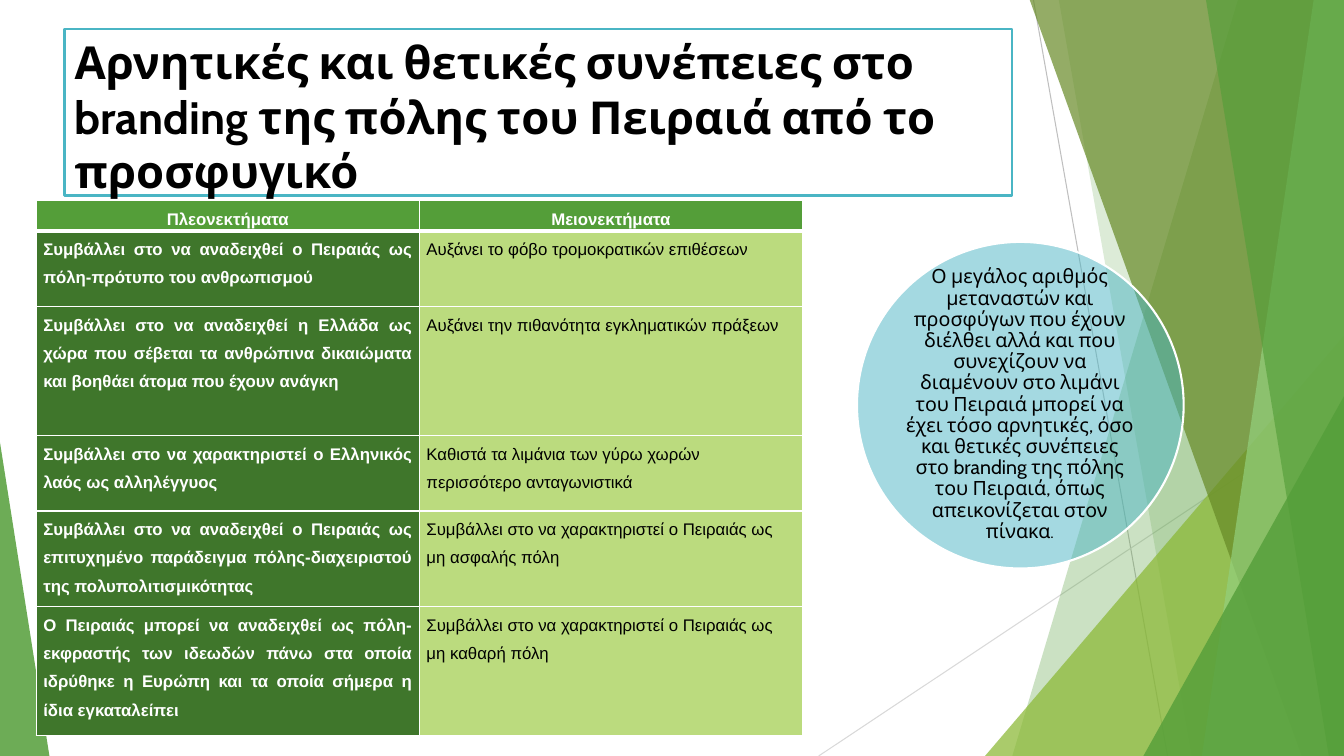
from lxml.etree import SubElement
from pptx import Presentation
from pptx.dml.color import RGBColor
from pptx.enum.shapes import MSO_CONNECTOR, MSO_SHAPE
from pptx.enum.text import MSO_ANCHOR, MSO_AUTO_SIZE, PP_ALIGN
from pptx.oxml import parse_xml
from pptx.oxml.ns import nsdecls, qn
from pptx.util import Pt

SCALE = 9144
WIDTH, HEIGHT = 1333, 750
COLORS = {
    "white": "FFFFFF", "black": "000000", "green": "549E39", "dark": "3F762B",
    "pale": "BBDB7E", "lime": "8AB833", "olive": "678A26", "mint": "93D07D",
    "teal": "4AB5C4", "gray": "BFBFBF", "silver": "D9D9D9",
}
TITLE = "Αρνητικές και θετικές συνέπειες στο branding της πόλης του Πειραιά από το προσφυγικό"
REMARK = (
    "Ο μεγάλος αριθμός μεταναστών και προσφύγων που έχουν διέλθει αλλά και που "
    "συνεχίζουν να διαμένουν στο λιμάνι του Πειραιά μπορεί να έχει τόσο αρνητικές, "
    "όσο και θετικές συνέπειες στο branding της πόλης του Πειραιά, όπως "
    "απεικονίζεται στον πίνακα"
)
ROWS = [
    (30, "Πλεονεκτήματα", "Μειονεκτήματα"),
    (75, "Συμβάλλει στο να αναδειχθεί ο Πειραιάς ως πόλη-πρότυπο του ανθρωπισμού",
     "Αυξάνει το φόβο τρομοκρατικών επιθέσεων"),
    (128, "Συμβάλλει στο να αναδειχθεί η Ελλάδα ως χώρα που σέβεται τα ανθρώπινα "
     "δικαιώματα και βοηθάει άτομα που έχουν ανάγκη",
     "Αυξάνει την πιθανότητα εγκληματικών πράξεων"),
    (75, "Συμβάλλει στο να χαρακτηριστεί ο Ελληνικός λαός ως αλληλέγγυος",
     "Καθιστά τα λιμάνια των γύρω χωρών περισσότερο ανταγωνιστικά"),
    (95, "Συμβάλλει στο να αναδειχθεί ο Πειραιάς ως επιτυχημένο παράδειγμα "
     "πόλης-διαχειριστού της πολυπολιτισμικότητας",
     "Συμβάλλει στο να χαρακτηριστεί ο Πειραιάς ως μη ασφαλής πόλη"),
    (128, "Ο Πειραιάς μπορεί να αναδειχθεί ως πόλη-εκφραστής των ιδεωδών πάνω στα "
     "οποία ιδρύθηκε η Ευρώπη και τα οποία σήμερα η ίδια εγκαταλείπει",
     "Συμβάλλει στο να χαρακτηριστεί ο Πειραιάς ως μη καθαρή πόλη"),
]


def px(value):
    return value * SCALE


def rgb(name):
    return RGBColor.from_string(COLORS[name])


class SlideBuilder:
    heading_font = "Cabin"
    table_font = "Arial"

    def __init__(self, slide):
        self.slide = slide
        self.shapes = slide.shapes

    def run(self, paragraph, text, size, font, color="black", bold=False):
        run = paragraph.add_run()
        run.text = text
        run.font.size = Pt(size)
        run.font.name = font
        run.font.bold = bold
        run.font.color.rgb = rgb(color)

    def paint(self, shape, color, opacity):
        shape.shadow.inherit = False
        shape.fill.solid()
        shape.fill.fore_color.rgb = rgb(color)
        fill = shape._element.spPr.find(qn("a:solidFill"))
        SubElement(fill[0], qn("a:alpha"), val=str(opacity * 1000))
        shape.line.fill.background()

    def line(self, start, end, color):
        connector = self.shapes.add_connector(
            MSO_CONNECTOR.STRAIGHT, *map(px, start + end))
        connector.line.color.rgb = rgb(color)
        connector.line.width = Pt(0.75)
        SubElement(connector._element.spPr, qn("a:effectLst"))

    def band(self, top_left, bottom_left, color, opacity):
        builder = self.shapes.build_freeform(top_left, -1, scale=SCALE)
        builder.add_line_segments([(WIDTH, -1), (WIDTH, HEIGHT), (bottom_left, HEIGHT)])
        self.paint(builder.convert_to_shape(), color, opacity)

    def triangle(self, left, top, width, apex, color, opacity):
        shape = self.shapes.add_shape(
            MSO_SHAPE.ISOSCELES_TRIANGLE, px(left), px(top), px(width), px(HEIGHT - top))
        shape.adjustments[0] = apex
        self.paint(shape, color, opacity)

    def title(self, box, text):
        title = self.shapes.title
        title.left, title.top, title.width, title.height = map(px, box)
        title.line.color.rgb = rgb("teal")
        title.line.width = Pt(1.5)
        frame = title.text_frame
        frame.auto_size = MSO_AUTO_SIZE.NONE
        frame.vertical_anchor = MSO_ANCHOR.TOP
        paragraph = frame.paragraphs[0]
        paragraph.alignment = PP_ALIGN.LEFT
        self.run(paragraph, text, 32.4, self.heading_font, bold=True)

    def circle(self, left, top, size):
        shape = self.shapes.add_shape(MSO_SHAPE.OVAL, *map(px, (left, top, size, size)))
        self.paint(shape, "teal", 50)
        shape.line.color.rgb = rgb("white")
        shape.line.width = Pt(1.5)

    def text(self, box, parts):
        frame = self.shapes.add_textbox(*map(px, box)).text_frame
        frame.word_wrap = True
        frame.vertical_anchor = MSO_ANCHOR.MIDDLE
        frame.margin_left = frame.margin_right = frame.margin_top = frame.margin_bottom = 0
        paragraph = frame.paragraphs[0]
        paragraph.alignment = PP_ALIGN.CENTER
        paragraph.line_spacing = 0.9
        for text, size in parts:
            self.run(paragraph, text, size, self.heading_font)

    def borders(self, cell, widths):
        properties = cell._tc.get_or_add_tcPr()
        for index, (side, width) in enumerate(widths.items()):
            properties.insert(index, parse_xml(
                f'<a:ln{side} {nsdecls("a")} w="{Pt(width)}"><a:solidFill>'
                f'<a:srgbClr val="{COLORS["white"]}"/></a:solidFill></a:ln{side}>'))

    def cell(self, cell, text, row, column):
        header = row == 0
        strong = header or column == 0
        cell.margin_left = cell.margin_right = px(7)
        cell.margin_top = cell.margin_bottom = 0
        cell.fill.solid()
        cell.fill.fore_color.rgb = rgb("green" if header else ("dark", "pale")[column])
        self.borders(cell, {"L": 1, "R": 1, "T": 3 if row == 1 else 1, "B": 3 if header else 1})
        paragraph = cell.text_frame.paragraphs[0]
        paragraph.line_spacing = 1.5
        paragraph.alignment = PP_ALIGN.LEFT
        if strong:
            paragraph.alignment = PP_ALIGN.CENTER if header else PP_ALIGN.JUSTIFY
            paragraph.space_before = paragraph.space_after = Pt(3.8)
        self.run(paragraph, text, 12, self.table_font, "white" if strong else "black", strong)

    def table(self, left, top, column_width, rows):
        height = sum(row[0] for row in rows)
        table = self.shapes.add_table(
            len(rows), 2, px(left), px(top), px(2 * column_width), px(height)).table
        table.first_row = table.horz_banding = False
        for column in table.columns:
            column.width = px(column_width)
        for row_index, (row_height, *texts) in enumerate(rows):
            table.rows[row_index].height = px(row_height)
            for column_index, text in enumerate(texts):
                self.cell(table.cell(row_index, column_index), text, row_index, column_index)


def main():
    presentation = Presentation()
    presentation.slide_width, presentation.slide_height = px(WIDTH), px(HEIGHT)
    builder = SlideBuilder(presentation.slides.add_slide(presentation.slide_layouts[5]))
    builder.line((1025, 0), (1158, HEIGHT), "gray")
    builder.line((WIDTH, 403), (812, HEIGHT), "silver")
    builder.band(1228, 1004, "green", 30)
    builder.band(1050, 1182, "green", 20)
    builder.triangle(977, 333, 356, 1, "lime", 72)
    builder.band(1021, 1291, "olive", 70)
    builder.band(1303, 1192, "mint", 70)
    builder.band(1196, 1318, "green", 65)
    builder.triangle(1134, 393, 199, 1, "green", 80)
    builder.triangle(0, 439, 49, 0, "green", 85)
    builder.title((64, 29, 940, 165), TITLE)
    builder.table(36, 199, 380, ROWS)
    builder.circle(850, 240, 324)
    builder.text((897, 287, 229, 229), [(REMARK, 14), (".", 12)])
    presentation.save("out.pptx")


if __name__ == "__main__":
    main()
